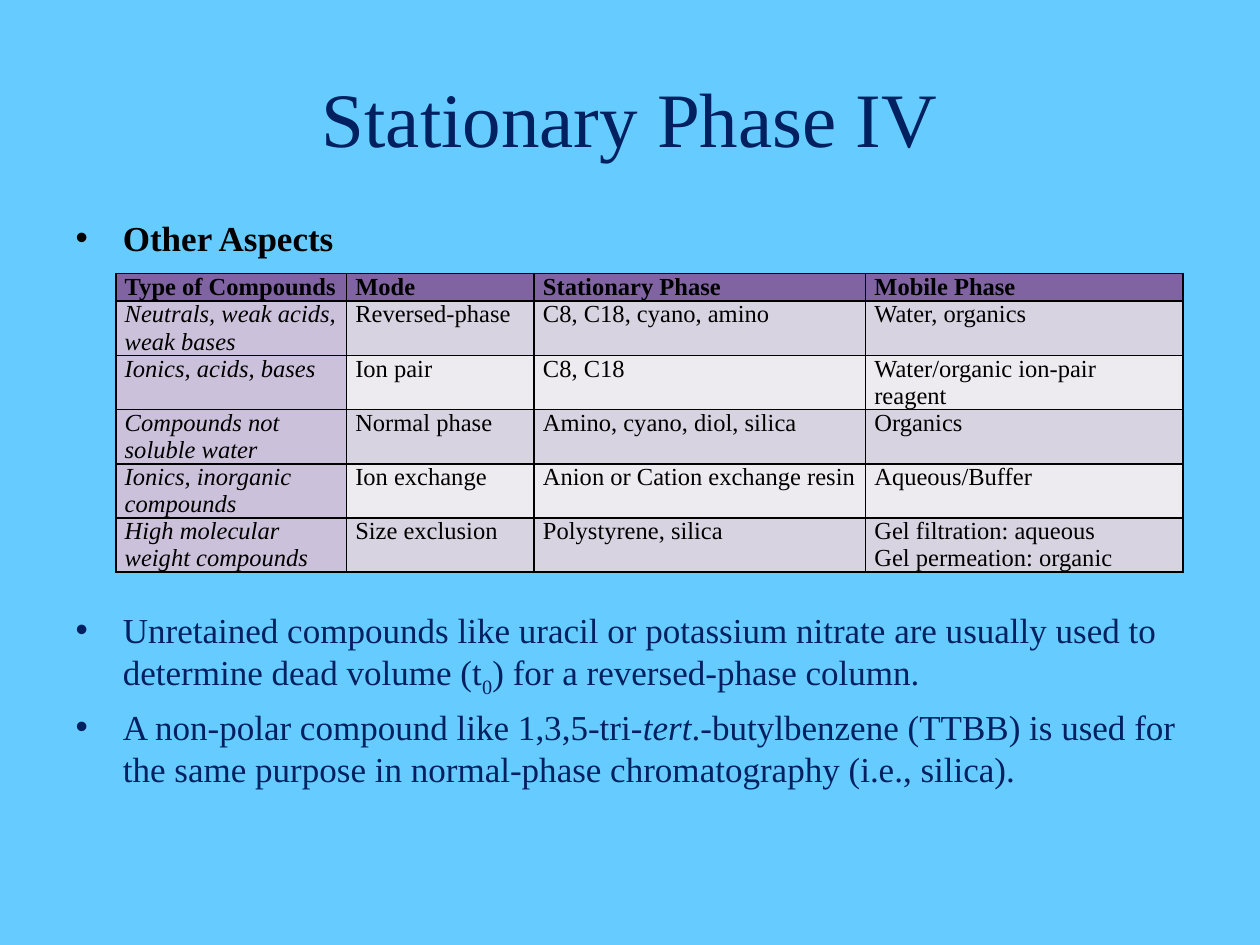
import dataclasses

import pptx
import pptx.dml.color
import pptx.enum.text
import pptx.oxml
import pptx.oxml.ns
import pptx.util
from pptx.util import Inches

RGBColor = pptx.dml.color.RGBColor
SKY = RGBColor(0x66, 0xCC, 0xFF)
NAVY = RGBColor(0x00, 0x20, 0x60)
BLACK = RGBColor(0x00, 0x00, 0x00)
HEADER_FILL = RGBColor(0x80, 0x64, 0xA2)
LABEL_FILL = RGBColor(0xCC, 0xC1, 0xDA)
BAND_FILLS = (RGBColor(0xD8, 0xD3, 0xE0), RGBColor(0xED, 0xEA, 0xF0))
FONT_NAME = "Times New Roman"


@dataclasses.dataclass
class Phrase:
    text: str
    bold: bool = False
    italic: bool = False
    subscript: bool = False


@dataclasses.dataclass
class Bullet:
    phrases: list[Phrase]
    color: RGBColor
    space_before: float


BULLETS = [
    Bullet([Phrase("Other Aspects", bold=True)], BLACK, 4),
    # The wide gap leaves room for the table
    Bullet([
        Phrase("Unretained compounds like uracil or potassium nitrate are "
               "usually used to determine dead volume (t"),
        Phrase("0", subscript=True),
        Phrase(") for a reversed-phase column."),
    ], NAVY, 200),
    Bullet([
        Phrase("A non-polar compound like 1,3,5-tri-"),
        Phrase("tert", italic=True),
        Phrase(".-butylbenzene (TTBB) is used for the same purpose in "
               "normal-phase chromatography (i.e., silica)."),
    ], NAVY, 4),
]

COLUMN_WIDTHS = (1.83, 1.49, 2.63, 2.52)
HEADER_HEIGHT, ROW_HEIGHT = 0.22, 0.43
TABLE_ROWS = [
    ("Type of Compounds", "Mode", "Stationary Phase", "Mobile Phase"),
    ("Neutrals, weak acids, weak bases", "Reversed-phase",
     "C8, C18, cyano, amino", "Water, organics"),
    ("Ionics, acids, bases", "Ion pair", "C8, C18",
     "Water/organic ion-pair reagent"),
    ("Compounds not soluble water", "Normal phase",
     "Amino, cyano, diol, silica", "Organics"),
    ("Ionics, inorganic compounds", "Ion exchange",
     "Anion or Cation exchange resin", "Aqueous/Buffer"),
    ("High molecular weight compounds", "Size exclusion",
     "Polystyrene, silica",
     "Gel filtration: aqueous\nGel permeation: organic"),
]


def set_attributes(target, values: dict) -> None:
    for name, value in values.items():
        setattr(target, name, value)


def add_run(paragraph, phrase: Phrase, size: float, color: RGBColor) -> None:
    run = paragraph.add_run()
    run.text = phrase.text
    set_attributes(run.font, {"name": FONT_NAME, "size": pptx.util.Pt(size),
                              "bold": phrase.bold, "italic": phrase.italic})
    run.font.color.rgb = color
    if phrase.subscript:
        run._r.get_or_add_rPr().set("baseline", "-25000")


def place(shape, left: float, top: float, width: float, height: float) -> None:
    set_attributes(shape, {"left": Inches(left), "top": Inches(top),
                           "width": Inches(width), "height": Inches(height)})
    set_attributes(shape.text_frame, {
        "word_wrap": True, "auto_size": pptx.enum.text.MSO_AUTO_SIZE.NONE})


def add_borders(cell) -> None:
    properties = cell._tc.get_or_add_tcPr()
    for index, side in enumerate(("lnL", "lnR", "lnT", "lnB")):
        properties.insert(index, pptx.oxml.parse_xml(
            f'<a:{side} {pptx.oxml.ns.nsdecls("a")} w="12700"><a:solidFill>'
            f'<a:srgbClr val="{BLACK}"/></a:solidFill></a:{side}>'))


def cell_fill(row: int, column: int) -> RGBColor:
    if row == 0:
        return HEADER_FILL
    return LABEL_FILL if column == 0 else BAND_FILLS[(row - 1) % 2]


def draw_bullets(text_frame, bullets: list[Bullet]) -> None:
    for index, bullet in enumerate(bullets):
        paragraph = text_frame.add_paragraph() if index else text_frame.paragraphs[0]
        paragraph.space_before = pptx.util.Pt(bullet.space_before)
        for phrase in bullet.phrases:
            add_run(paragraph, phrase, 20, bullet.color)


def draw_cell(cell, text: str, row: int, column: int) -> None:
    set_attributes(cell, {"margin_left": Inches(0.07), "margin_right": Inches(0.07),
                          "margin_top": 0, "margin_bottom": 0})
    cell.fill.solid()
    cell.fill.fore_color.rgb = cell_fill(row, column)
    add_borders(cell)
    for index, line in enumerate(text.split("\n")):
        frame = cell.text_frame
        paragraph = frame.add_paragraph() if index else frame.paragraphs[0]
        phrase = Phrase(line, bold=row == 0, italic=row > 0 and column == 0)
        add_run(paragraph, phrase, 14, BLACK)


def draw_table(slide) -> None:
    height = HEADER_HEIGHT + ROW_HEIGHT * (len(TABLE_ROWS) - 1)
    table = slide.shapes.add_table(
        len(TABLE_ROWS), len(COLUMN_WIDTHS), Inches(0.92), Inches(2.17),
        Inches(sum(COLUMN_WIDTHS)), Inches(height)).table
    for column, width in zip(table.columns, COLUMN_WIDTHS):
        column.width = Inches(width)
    for row, texts in enumerate(TABLE_ROWS):
        table.rows[row].height = Inches(ROW_HEIGHT if row else HEADER_HEIGHT)
        for column, text in enumerate(texts):
            draw_cell(table.cell(row, column), text, row, column)


def main() -> None:
    presentation = pptx.Presentation()
    presentation.slide_width = Inches(10)
    presentation.slide_height = Inches(7.5)
    slide = presentation.slides.add_slide(presentation.slide_layouts[1])
    slide.background.fill.solid()
    slide.background.fill.fore_color.rgb = SKY

    # Title
    title = slide.shapes.title
    place(title, 0.5, 0.3, 9, 1.25)
    add_run(title.text_frame.paragraphs[0], Phrase("Stationary Phase IV"), 44, NAVY)

    # Bullets above and below the table
    body = slide.placeholders[1]
    place(body, 0.5, 1.67, 9, 5.58)
    draw_bullets(body.text_frame, BULLETS)

    # Table of compound types
    draw_table(slide)
    presentation.save("out.pptx")


if __name__ == "__main__":
    main()
